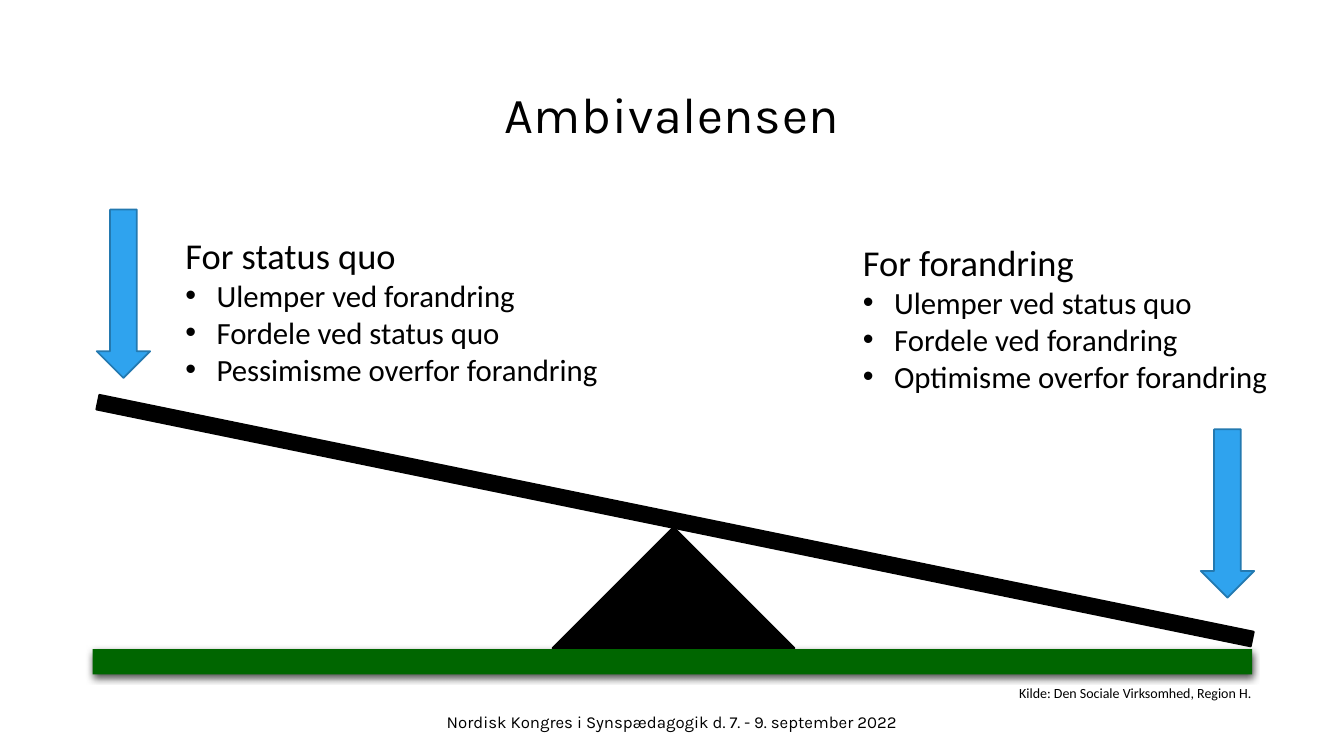
from lxml import etree
from pptx import Presentation
from pptx.dml.color import RGBColor
from pptx.enum.shapes import MSO_SHAPE
from pptx.enum.text import MSO_ANCHOR, PP_ALIGN
from pptx.oxml import parse_xml
from pptx.oxml.ns import nsdecls, qn
from pptx.util import Inches, Pt

RECT = MSO_SHAPE.RECTANGLE
PEAK = MSO_SHAPE.ISOSCELES_TRIANGLE
ARROW = MSO_SHAPE.DOWN_ARROW
MID, TOP = MSO_ANCHOR.MIDDLE, MSO_ANCHOR.TOP
LEFT, CENTER = PP_ALIGN.LEFT, PP_ALIGN.CENTER
COLORS = {"ink": "000000", "grass": "006600", "sky": "2FA3EE", "edge": "2379B0"}

deck = Presentation()
deck.slide_width = Inches(13.33)
deck.slide_height = Inches(7.5)
slide = deck.slides.add_slide(deck.slide_layouts[6])


def add_block(kind, box, fill, line=None):
    block = slide.shapes.add_shape(kind, *map(Inches, box))
    block.shadow.inherit = False
    block.fill.solid()
    block.fill.fore_color.rgb = RGBColor.from_string(COLORS[fill])
    if line:
        block.line.color.rgb = RGBColor.from_string(COLORS[line])
        block.line.width = Pt(1.25)
    else:
        block.line.fill.background()
    return block


def add_text(box, lines, font, align=LEFT, anchor=TOP, wrap=True):
    frame = slide.shapes.add_textbox(*map(Inches, box)).text_frame
    frame.word_wrap = wrap
    frame.vertical_anchor = anchor
    for i, (text, size) in enumerate(lines):
        para = frame.paragraphs[0] if i == 0 else frame.add_paragraph()
        para.text = text
        para.alignment = align
        para.font.name = font
        para.font.size = Pt(size)
        para.font.color.rgb = RGBColor.from_string(COLORS["ink"])
    return frame


title = add_text((1, 0.29, 11.33, 1.75), [("Ambivalensen", 36)], "Karla", CENTER, MID)
title.paragraphs[0].line_spacing = 0.9
title.paragraphs[0].runs[0].font._element.set("spc", "50")

ground = add_block(RECT, (0.92, 6.44, 11.5, 0.25), "grass")
ground._element.spPr.find(qn("a:effectLst")).append(parse_xml(
    f'<a:outerShdw {nsdecls("a")} blurRad="{Pt(5)}" dist="{Pt(2)}" dir="5400000">'
    f'<a:srgbClr val="{COLORS["ink"]}"><a:alpha val="69000"/></a:srgbClr></a:outerShdw>'))

add_block(PEAK, (5.48, 5.23, 2.4, 1.2), "ink", "ink")
plank = add_block(RECT, (0.85, 5.09, 11.69, 0.15), "ink", "ink")
plank.rotation = 11.6

for left, top in [(0.96, 2.08), (11.91, 4.26)]:
    add_block(ARROW, (left, top, 0.53, 1.67), "sky", "edge")

sides = [
    (1.74, 2.26, "For status quo",
     ["Ulemper ved forandring", "Fordele ved status quo", "Pessimisme overfor forandring"]),
    (8.46, 2.33, "For forandring",
     ["Ulemper ved status quo", "Fordele ved forandring", "Optimisme overfor forandring"]),
]
for left, top, head, points in sides:
    lines = [(head, 26)] + [(point, 22) for point in points]
    frame = add_text((left, top, 4.43, 1.65), lines, "Calibri", wrap=False)
    for para in frame.paragraphs[1:]:
        props = para._p.get_or_add_pPr()
        props.set("marL", str(Inches(0.31)))
        props.set("indent", str(-Inches(0.31)))
        face = etree.Element(qn("a:buFont"), typeface="Arial")
        mark = etree.Element(qn("a:buChar"), char="•")
        props.insert(0, face)
        props.insert(1, mark)

add_text((10.01, 6.74, 2.79, 0.27),
         [("Kilde: Den Sociale Virksomhed, Region H.", 10)], "Calibri", wrap=False)
add_text((0, 7.01, 13.33, 0.4),
         [("Nordisk Kongres i Synspædagogik d. 7. - 9. september 2022", 12)], "Karla", CENTER)

deck.save("out.pptx")
